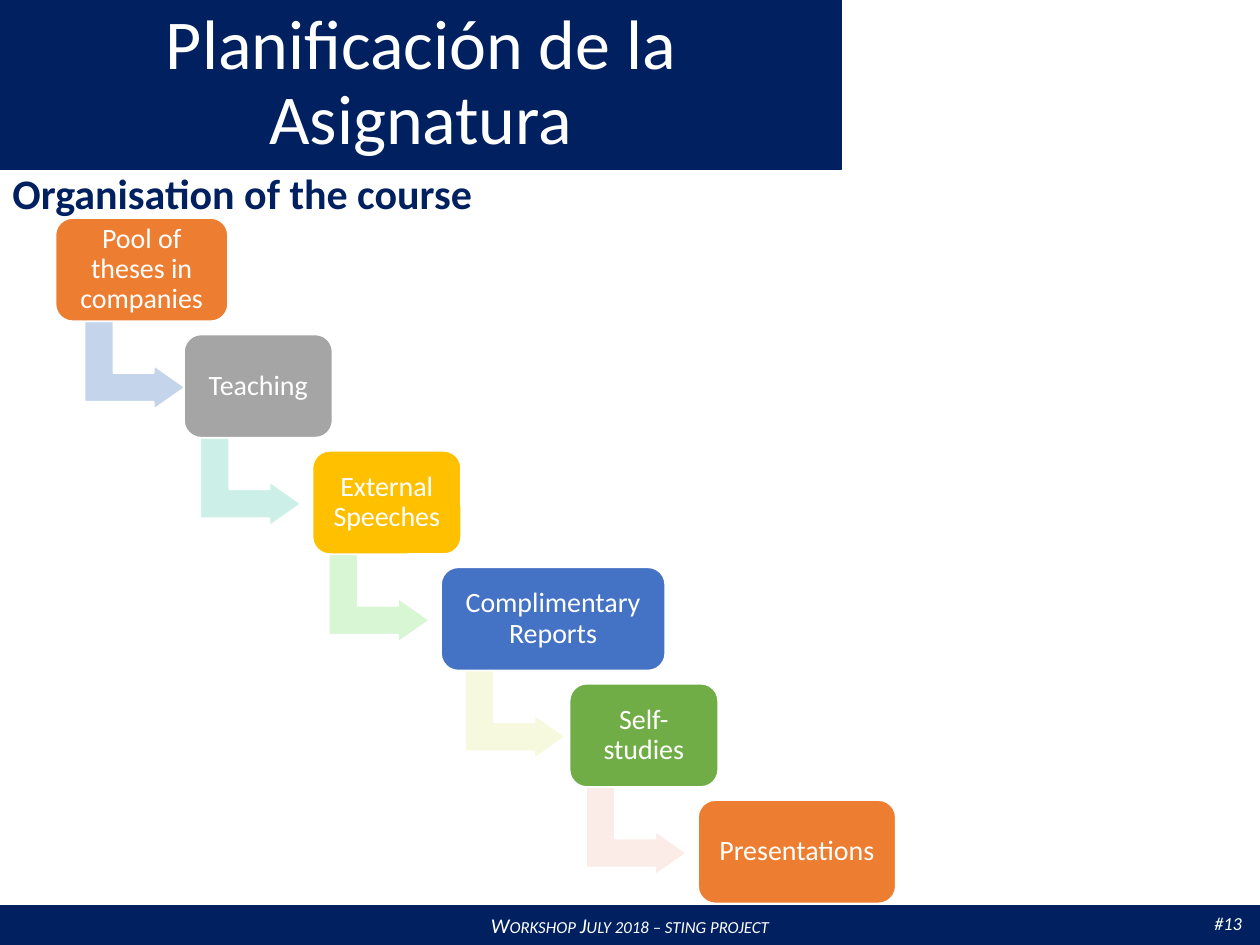
from pptx import Presentation
from pptx import util as u
from pptx.dml.color import RGBColor
from pptx.enum import shapes, text

NAVY, WHITE = "002060", "FFFFFF"
STEPS = [
    ("Pool of theses in companies", 1.37, "ED7D31", 0.28, "C4D5EB"),
    ("Teaching", 1.18, "A5A5A5", 0.18, "CCF0E7"),
    ("External Speeches", 1.18, "FFC000", 0.18, "D8F5D4"),
    ("Complimentary Reports", 1.78, "4472C4", 0.24, "F7F9DE"),
    ("Self-studies", 1.18, "70AD47", 0.18, "FCECE8"),
    ("Presentations", 1.57, "ED7D31", None, None),
]


def color(value):
    """Turn a hex string into a colour."""
    return RGBColor.from_string(value)


def inches(box):
    """Turn left, top, width and height into lengths."""
    return [u.Inches(length) for length in box]


def write(shape, words, size, ink=WHITE, para_format=None, frame_format=None, **font_format):
    """Write one formatted paragraph into a shape."""
    frame = shape.text_frame
    frame.text = words
    para = frame.paragraphs[0]
    font_format = {"name": "Calibri", "size": u.Pt(size), **font_format}
    for target, values in ((frame, frame_format), (para, para_format), (para.runs[0].font, font_format)):
        for name, value in (values or {}).items():
            setattr(target, name, value)
    para.runs[0].font.color.rgb = color(ink)
    return para.runs[0]


def add_filled(parent, kind, box, fill, line=WHITE):
    """Add a flat preset shape with a one-point outline."""
    shape = parent.add_shape(kind, *inches(box))
    shape.shadow.inherit = False
    shape.fill.solid()
    shape.fill.fore_color.rgb = color(fill)
    shape.line.color.rgb = color(line)
    shape.line.width = u.Pt(1)
    return shape


def add_label(page, box, words, size, ink, **font_format):
    """Add a single line of free text."""
    label = page.shapes.add_textbox(*inches(box))
    frame_format = {"word_wrap": False, "auto_size": text.MSO_AUTO_SIZE.SHAPE_TO_FIT_TEXT}
    write(label, words, size, ink, frame_format=frame_format, **font_format)


def add_header(page, box):
    """Place the title over its navy band."""
    add_filled(page.shapes, shapes.MSO_SHAPE.RECTANGLE, box, NAVY, NAVY)
    title = page.shapes.title
    page.shapes._spTree.append(title._element)
    for name, value in zip(("left", "top", "width", "height"), inches(box)):
        setattr(title, name, value)
    write(title, "Planificación de la Asignatura", 40,
          para_format={"alignment": text.PP_ALIGN.CENTER, "line_spacing": 0.9},
          frame_format={"vertical_anchor": text.MSO_ANCHOR.MIDDLE, "word_wrap": True,
                        "auto_size": text.MSO_AUTO_SIZE.NONE})


def add_footer(page, box):
    """Place the footer band with its caption and page number."""
    left, top, width, _ = box
    band = add_filled(page.shapes, shapes.MSO_SHAPE.RECTANGLE, box, NAVY, NAVY)
    span = write(band, "Workshop July 2018 – sting project", 12, italic=True,
                 para_format={"alignment": text.PP_ALIGN.CENTER},
                 frame_format={"vertical_anchor": text.MSO_ANCHOR.MIDDLE})
    span.font._element.set("cap", "small")
    add_label(page, (left + width - 0.46, top, 0.53, 0.28), "#13", 10.5, WHITE, italic=True)


def add_staircase(page, box):
    """Step the course stages down from the top left of the box."""
    left, top, width, height = box
    step_height = 0.82
    across = (width - STEPS[-1][1]) / (len(STEPS) - 1)
    down = (height - step_height) / (len(STEPS) - 1)
    group = page.shapes.add_group_shape().shapes
    margins = {f"margin_{side}": u.Inches(0.07) for side in ("left", "top", "right", "bottom")}
    for index, (words, step_width, fill, shift, arrow_fill) in enumerate(STEPS):
        x, y = left + index * across, top + index * down
        if arrow_fill:
            arrow = add_filled(group, shapes.MSO_SHAPE.BENT_UP_ARROW, (x + shift, y + 0.77, 0.7, 0.8), arrow_fill)
            arrow.rotation = 90
            for position, ratio in enumerate((0.328, 0.25, 0.358)):
                arrow.adjustments[position] = ratio
        stage = add_filled(group, shapes.MSO_SHAPE.ROUNDED_RECTANGLE, (x, y, step_width, step_height), fill)
        write(stage, words, 16,
              para_format={"alignment": text.PP_ALIGN.CENTER, "line_spacing": 0.9},
              frame_format={"vertical_anchor": text.MSO_ANCHOR.MIDDLE, "word_wrap": True, **margins})


def main():
    """Build and save the slide."""
    deck = Presentation()
    deck.slide_width, deck.slide_height = u.Inches(10), u.Inches(7.5)
    page = deck.slides.add_slide(deck.slide_layouts[5])
    add_footer(page, (0, 7.19, 10, 0.31))
    add_header(page, (0, 0, 6.68, 1.34))
    add_staircase(page, (0.44, 1.73, 6.67, 5.44))
    add_label(page, (0, 1.28, 3.89, 0.5), "Organisation of the course", 24, NAVY, bold=True)
    deck.save("out.pptx")


if __name__ == "__main__":
    main()
